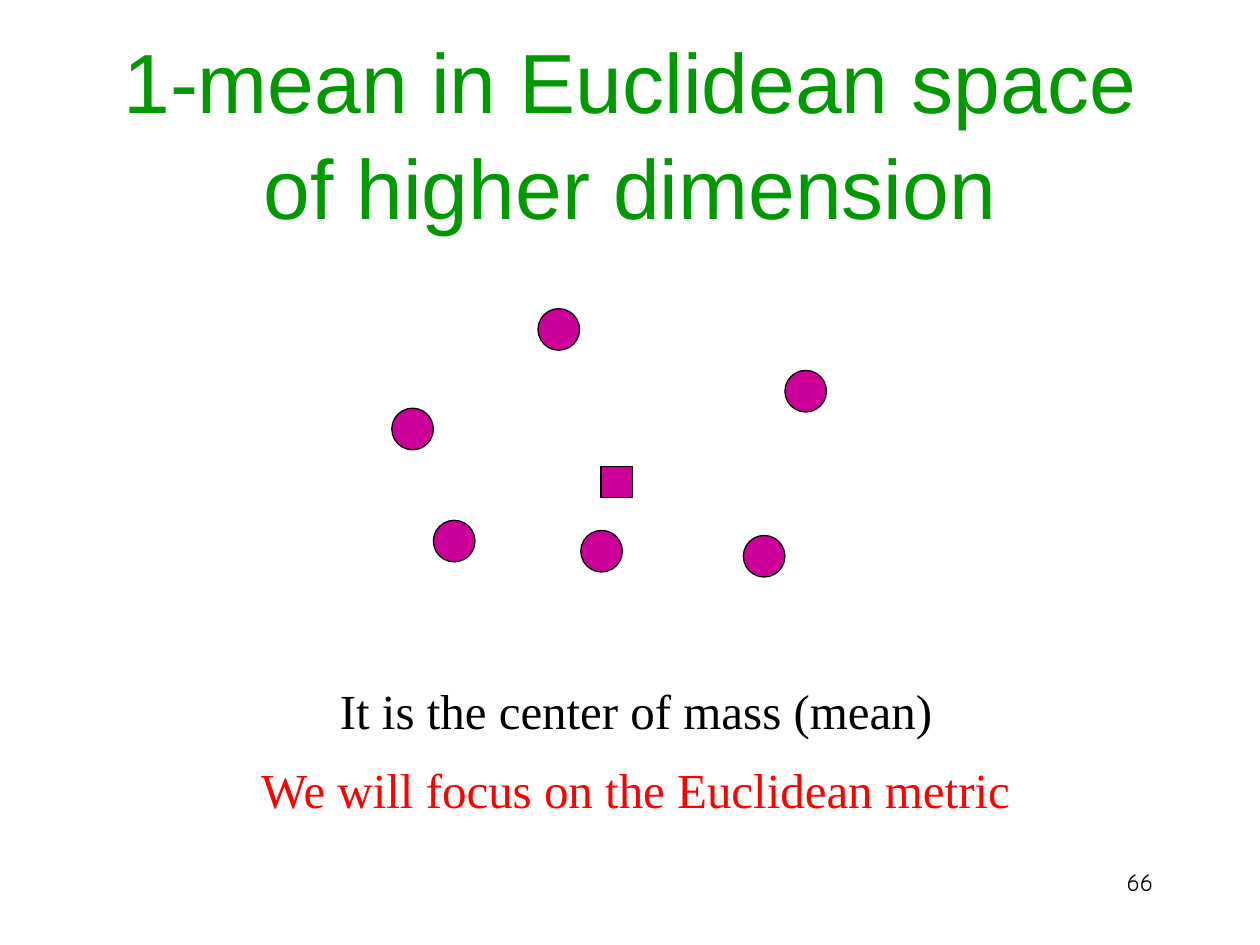
import pptx
import pptx.util
import pptx.dml.color
import pptx.enum.shapes
import pptx.enum.text

COLORS = {
    "title": "009900",
    "point": "CC0099",
    "text": "000000",
    "accent": "FF0000",
    "background": "FFFFFF",
}
ALIGN = pptx.enum.text.PP_ALIGN
ANCHOR = pptx.enum.text.MSO_ANCHOR
SHAPES = pptx.enum.shapes.MSO_SHAPE

presentation = pptx.Presentation()
presentation.slide_width = pptx.util.Inches(10)
presentation.slide_height = pptx.util.Inches(7.5)
column = presentation.slide_width / 100
row = presentation.slide_height / 75
slide = presentation.slides.add_slide(presentation.slide_layouts[6])
slide.background.fill.solid()
slide.background.fill.fore_color.rgb = pptx.dml.color.RGBColor.from_string(COLORS["background"])


def grid(left, top, width, height):
    return [int(left * column), int(top * row), int(width * column), int(height * row)]


def add_text(text, place, font="Times New Roman", size=28, color="text",
             align=ALIGN.CENTER, anchor=ANCHOR.TOP, spacing=1.0):
    box = slide.shapes.add_textbox(*grid(*place))
    box.text_frame.word_wrap = True
    box.text_frame.vertical_anchor = anchor
    paragraph = box.text_frame.paragraphs[0]
    paragraph.alignment = align
    paragraph.line_spacing = spacing
    run = paragraph.add_run()
    run.text = text
    run.font.name = font
    run.font.size = pptx.util.Pt(size)
    run.font.color.rgb = pptx.dml.color.RGBColor.from_string(COLORS[color])


add_text("1-mean in Euclidean space of higher dimension", (7.5, 4.1, 85, 12.5),
         font="Arial", size=48, color="title", anchor=ANCHOR.MIDDLE, spacing=1.05)
add_text("66", (71.7, 68.3, 20.8, 5), font="Comic Neue", size=14, align=ALIGN.RIGHT)

points = [(42.7, 24.5), (46.1, 42.1), (31.1, 32.4), (34.4, 41.3), (59, 42.5), (62.3, 29.4)]
mean = (47.7, 37)
markers = [(SHAPES.OVAL, point, 3.3) for point in points]
markers.append((SHAPES.RECTANGLE, mean, 2.5))

for kind, (left, top), size in markers:
    marker = slide.shapes.add_shape(kind, *grid(left, top, size, size))
    marker.shadow.inherit = False
    marker.fill.solid()
    marker.fill.fore_color.rgb = pptx.dml.color.RGBColor.from_string(COLORS["point"])
    marker.line.color.rgb = pptx.dml.color.RGBColor.from_string(COLORS["text"])
    marker.line.width = pptx.util.Pt(0.75)

captions = [("It is the center of mass (mean)", "text"),
            ("We will focus on the Euclidean metric", "accent")]
for index, (caption, color) in enumerate(captions):
    add_text(" " + caption, (0, 53.5 + 6.3 * index, 100, 5.7), color=color)

presentation.save("out.pptx")
